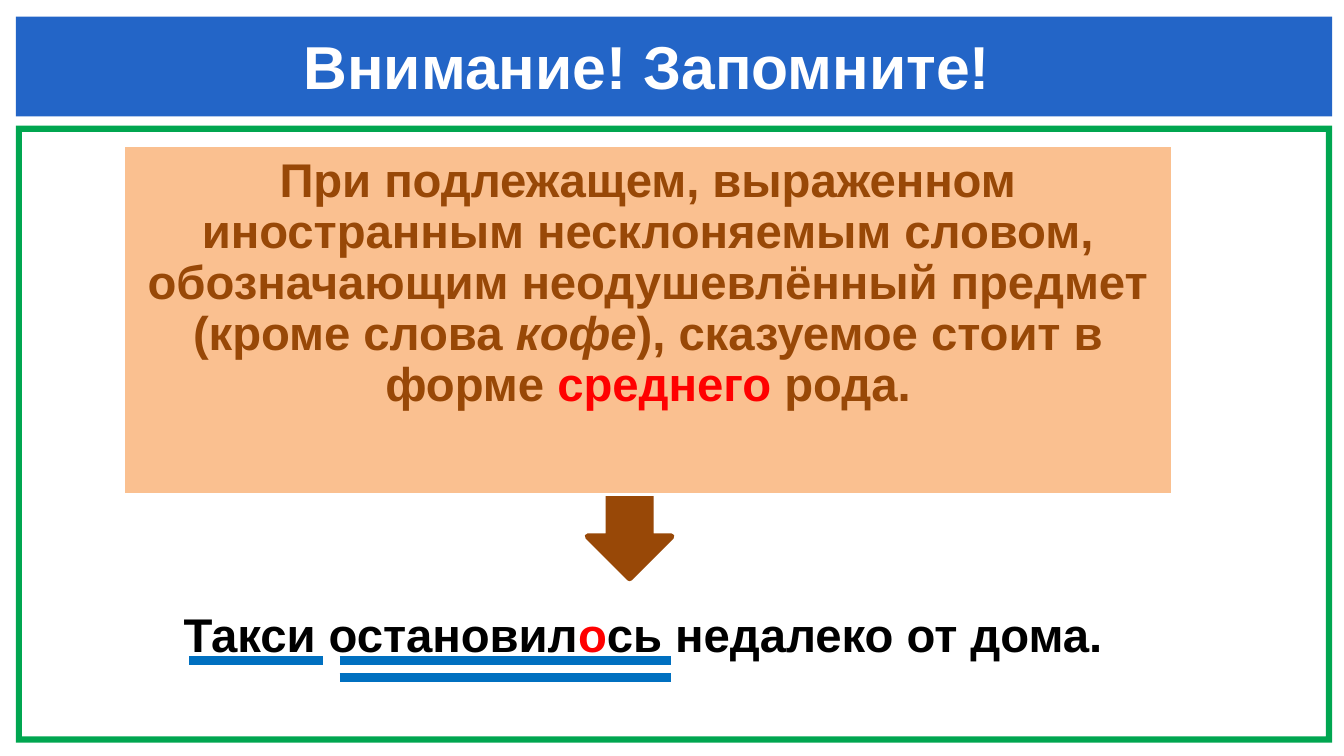
"""Builds a grammar rule slide: heading, rule, arrow and underlined example."""
from lxml.etree import SubElement
from pptx import Presentation
from pptx.dml.color import RGBColor
from pptx.enum.shapes import MSO_CONNECTOR, MSO_SHAPE
from pptx.enum.text import PP_ALIGN
from pptx.oxml.ns import qn
from pptx.util import Cm, Pt

COLORS = {
    "white": "FFFFFF", "black": "000000", "red": "FF0000", "brown": "984807",
    "peach": "FAC090", "green": "00A650", "blue": "2365C7", "line": "0070C0",
}


def color(name):
    return RGBColor.from_string(COLORS[name])


def write(para, text, size=16, tint="black", italic=False):
    run = para.add_run()
    run.text = text
    font = run.font
    font.name, font.size, font.bold, font.italic = "Arial", Pt(size), True, italic
    font.color.rgb = color(tint)


deck = Presentation()
deck.slide_width, deck.slide_height = Cm(16.03), Cm(9.02)
slide = deck.slides.add_slide(deck.slide_layouts[6])
shapes = slide.shapes

frame = shapes.add_shape(MSO_SHAPE.FRAME, Cm(0.19), Cm(1.5), Cm(15.7), Cm(7.36))
frame.adjustments[0] = 0.01
banner = shapes.add_shape(MSO_SHAPE.RECTANGLE, Cm(0.19), Cm(0.2), Cm(15.7), Cm(1.19))
arrow = shapes.add_shape(MSO_SHAPE.DOWN_ARROW, Cm(7.01), Cm(5.9), Cm(1), Cm(1))
for shape, tint in (frame, "green"), (banner, "blue"), (arrow, "brown"):
    shape.shadow.inherit = False
    shape.fill.solid()
    shape.fill.fore_color.rgb = color(tint)
    shape.line.fill.background()
arrow.line.color.rgb = color("brown")
arrow.line.width = Pt(2)

title = [("Внимание! Запомните!", {"size": 20.5, "tint": "white"})]
sample = [
    ("Такси остановил", {}),
    ("о", {"tint": "red"}),
    ("сь недалеко от дома.", {}),
]
for left, top, width, parts in (3.62, 0.35, 9, title), (2.19, 7.22, 12, sample):
    box = shapes.add_textbox(Cm(left), Cm(top), Cm(width), Cm(0.9))
    body = box.text_frame
    body.word_wrap = True
    body.margin_left = body.margin_right = body.margin_top = body.margin_bottom = 0
    for text, style in parts:
        write(body.paragraphs[0], text, **style)

table = shapes.add_table(1, 1, Cm(1.48), Cm(1.74), Cm(12.5), Cm(4.16)).table
table.first_row = table.horz_banding = False
cell = table.cell(0, 0)
cell.fill.solid()
cell.fill.fore_color.rgb = color("peach")
rule = cell.text_frame.paragraphs[0]
rule.alignment = PP_ALIGN.CENTER
rule.line_spacing = 0.97
for text, style in (
    ("При подлежащем, выраженном иностранным несклоняемым словом, "
     "обозначающим неодушевлённый предмет (кроме слова ", {}),
    ("кофе", {"italic": True}),
    ("), сказуемое стоит в форме ", {}),
    ("среднего", {"tint": "red"}),
    (" рода.", {}),
):
    write(rule, text, **{"tint": "brown", **style})

for start, end, level in (2.26, 3.85, 7.88), (4.05, 8, 7.88), (4.05, 8, 8.08):
    stroke = shapes.add_connector(
        MSO_CONNECTOR.STRAIGHT, Cm(start), Cm(level), Cm(end), Cm(level))
    stroke.line.color.rgb = color("line")
    stroke.line.width = Pt(3)
    SubElement(stroke._element.spPr, qn("a:effectLst"))

deck.save("out.pptx")
